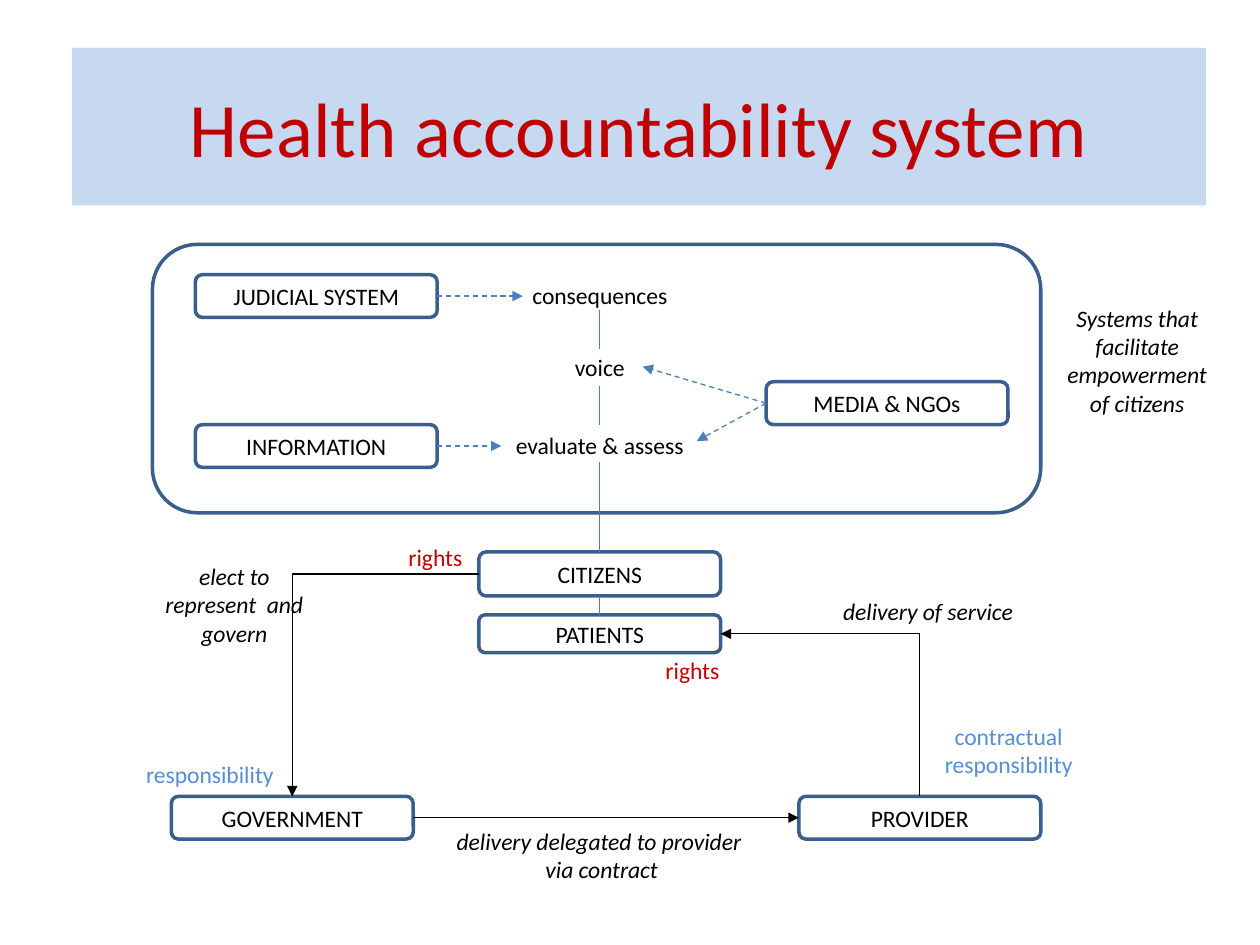
from lxml.etree import SubElement
from pptx import Presentation
from pptx.dml.color import RGBColor
from pptx.enum.dml import MSO_LINE
from pptx.enum.shapes import MSO_CONNECTOR as LINK, MSO_SHAPE as SHAPE
from pptx.enum.text import MSO_ANCHOR as ANCHOR, PP_ALIGN as ALIGN
from pptx.oxml.ns import qn
from pptx.util import Inches, Pt

COLORS = {"band": "C6D9F1", "red": "C00000", "black": "000000", "sky": "558ED5",
          "border": "3A5F8C", "link": "4B7EBC", "white": "FFFFFF"}
UNIT = Inches(0.1)  
TOP, LEFT, BOTTOM, RIGHT = range(4)
BOX_W, BOX_H = 19.2, 3.4


def rgb(name):
    """Return the named palette colour."""
    return RGBColor.from_string(COLORS[name])


def grid(*cells):
    """Turn grid columns and rows into lengths."""
    return [round(c * UNIT) for c in cells]


def write(sp, text, size=13.5, color="black", italic=False, anchor=ANCHOR.TOP):
    """Write centred text into a shape."""
    tf = sp.text_frame
    tf.word_wrap = True
    tf.vertical_anchor = anchor
    p = tf.paragraphs[0]
    p.text = text
    p.alignment = ALIGN.CENTER
    for r in p.runs:
        r.font.name, r.font.size, r.font.italic = "Calibri", Pt(size), italic
        r.font.color.rgb = rgb(color)


def label(s, box, x, y, w, text, rows=1, **fmt):
    """Place a text label of some rows inside a region."""
    sp = s.shapes.add_textbox(*grid(box[0] + x, box[1] + y, w, 1 + 2.25 * rows))
    write(sp, text, **fmt)


def frame(s, box, x=0, y=0, w=BOX_W, h=BOX_H, text="", fill=None):
    """Place an outlined rounded box inside a region."""
    sp = s.shapes.add_shape(SHAPE.ROUNDED_RECTANGLE, *grid(box[0] + x, box[1] + y, w, h))
    sp.shadow.inherit = False
    if fill:
        sp.fill.solid()
        sp.fill.fore_color.rgb = rgb(fill)
    else:
        sp.fill.background()
    sp.line.color.rgb = rgb("border")
    sp.line.width = Pt(2)
    if text:
        write(sp, text, anchor=ANCHOR.MIDDLE)
    return sp


def link(s, box, start, end, color="link", dash=False, arrow=None, bent=False):
    """Join two ends, each a grid point or a (shape, side) pair."""
    cx = s.shapes.add_connector(LINK.ELBOW if bent else LINK.STRAIGHT, 0, 0, 0, 0)
    points = [(p, isinstance(p[0], (int, float))) for p in (start, end)]
    (a, a_free), (b, b_free) = points
    if a_free:
        cx.begin_x, cx.begin_y = grid(box[0] + a[0], box[1] + a[1])
    else:
        cx.begin_connect(*a)
    if b_free:
        cx.end_x, cx.end_y = grid(box[0] + b[0], box[1] + b[1])
    else:
        cx.end_connect(*b)
    cx.line.color.rgb = rgb(color)
    cx.line.width = Pt(0.75)
    if dash:
        cx.line.dash_style = MSO_LINE.DASH
    pr = cx._element.spPr
    if arrow:
        SubElement(pr.find(qn("a:ln")), qn(f"a:{arrow}End"), type="triangle")
    SubElement(pr, qn("a:effectLst"))
    if bent:
        pr.find(qn("a:prstGeom")).set("prst", "bentConnector2")


def title(s, box):
    """Format the title band."""
    sp = s.shapes.title
    sp.left, sp.top, sp.width, sp.height = grid(*box)
    sp.fill.solid()
    sp.fill.fore_color.rgb = rgb("band")
    write(sp, "Health accountability system", size=44, color="red", anchor=ANCHOR.MIDDLE)


def empowerment(s, box, citizens):
    """Draw the systems that lead to the citizens' box."""
    frame(s, box, w=box[2], h=box[3])
    judicial = frame(s, box, 3.4, 2.4, text="JUDICIAL SYSTEM")
    info = frame(s, box, 3.4, 14.3, text="INFORMATION")
    media = frame(s, box, 48.7, 10.9, text="MEDIA & NGOs")
    axis, w = 35.5, 18.5
    for y, text in ((2.4, "consequences"), (8.1, "voice"), (14.3, "evaluate & assess")):
        label(s, box, axis - w / 2, y, w, text)
    for start, end in ((5.2, 8.3), (11.2, 14.3)):
        link(s, box, (axis, start), (axis, end))
    link(s, box, (axis, 17.3), (citizens, TOP))
    for sp, side, end in ((judicial, RIGHT, (29.4, 4.1)), (info, RIGHT, (27.7, 16)),
                          (media, LEFT, (38.9, 9.7)), (media, LEFT, (43.2, 15.6))):
        link(s, box, (sp, side), end, dash=True, arrow="tail")
    label(s, box, 71.2, 4.2, 13.9, "Systems that facilitate empowerment of citizens",
          rows=4, italic=True)


def service_cycle(s, box):
    """Draw the citizen, government and provider cycle; return the citizens' box."""
    citizens = frame(s, box, 25.9, 2.8, h=3.5, text="CITIZENS", fill="white")
    patients = frame(s, box, 25.9, 7.8, h=3, text="PATIENTS")
    government = frame(s, box, 1.5, 22.2, text="GOVERNMENT")
    provider = frame(s, box, 51.3, 22.2, text="PROVIDER")
    link(s, box, (citizens, BOTTOM), (patients, TOP))
    link(s, box, (citizens, LEFT), (government, TOP), "black", arrow="tail", bent=True)
    link(s, box, (patients, RIGHT), (provider, TOP), "black", arrow="head", bent=True)
    link(s, box, (government, RIGHT), (provider, LEFT), "black", arrow="tail")
    for x, y in ((13.2, 1.6), (33.6, 10.6)):
        label(s, box, x, y, 18.5, "rights", color="red")
    label(s, box, -4.7, 18.8, 18.5, "responsibility", color="sky")
    label(s, box, 58.7, 15.8, 18.5, "contractual responsibility", rows=2, color="sky")
    label(s, box, 52.3, 5.9, 18.5, "delivery of service", italic=True)
    label(s, box, 0, 3.1, 13, "elect to represent  and govern", rows=3, italic=True)
    label(s, box, 22.7, 24.1, 25.9, "delivery delegated to provider \vvia contract",
          rows=2, italic=True)
    return citizens


def main():
    """Build and save the slide."""
    prs = Presentation()
    prs.slide_width, prs.slide_height = grid(100, 75)
    s = prs.slides.add_slide(prs.slide_layouts[5])
    title(s, (5.7, 3.8, 90, 12.5))
    citizens = service_cycle(s, (12.1, 41, 70.5, 30))
    empowerment(s, (12.1, 19.4, 70.5, 21.3), citizens)
    prs.save("out.pptx")


if __name__ == "__main__":
    main()
